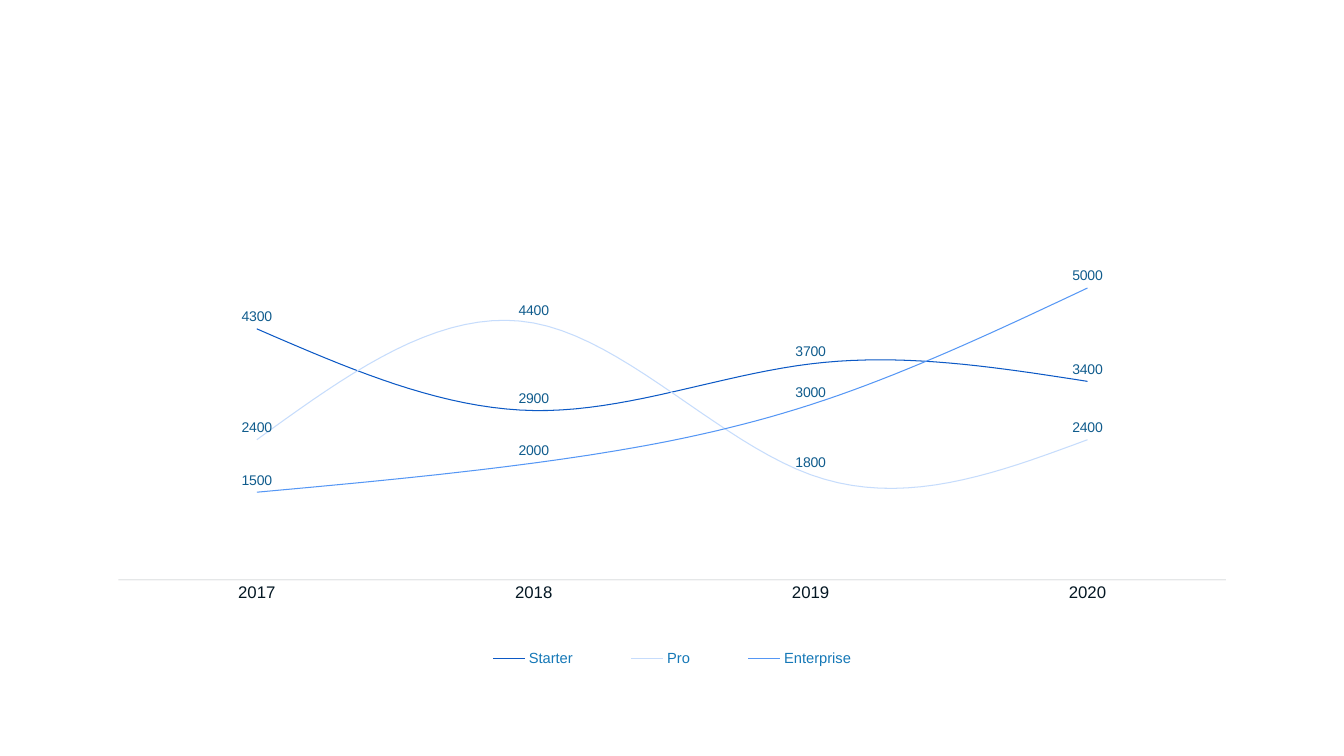
from dataclasses import dataclass

import lxml.etree
import pptx
import pptx.chart.data
import pptx.dml.color
import pptx.enum.chart
import pptx.oxml
import pptx.oxml.ns
import pptx.util
from pptx.util import Cm


@dataclass(frozen=True)
class Theme:
    font: str = "Arial"
    axis: str = "041723"
    legend: str = "1578B7"
    label: str = "105C8D"
    lines: tuple = ("0C59C5", "C6DCFC", "5597F5")
    axis_size: float = 12
    legend_size: float = 10.5
    label_size: float = 10
    line_width: float = 0.75
    axis_opacity: int = 10


THEME = Theme()
YEARS = ("2017", "2018", "2019", "2020")
PLANS = {
    "Starter": (4300, 2900, 3700, 3400),
    "Pro": (2400, 4400, 1800, 2400),
    "Enterprise": (1500, 2000, 3000, 5000),
}


def colour(value):
    return pptx.dml.color.RGBColor.from_string(value)


def set_font(font, size, value):
    font.name = THEME.font
    font.size = pptx.util.Pt(size)
    font.color.rgb = colour(value)


def set_line(line, value):
    line.color.rgb = colour(value)
    line.width = pptx.util.Pt(THEME.line_width)


def make_layout(x, y, width, height, inner=False):
    namespace = pptx.oxml.ns.nsdecls("c")
    layout = pptx.oxml.parse_xml(f"<c:layout {namespace}><c:manualLayout/></c:layout>")
    settings = [("layoutTarget", "inner")] if inner else []
    settings += [("xMode", "edge"), ("yMode", "edge")]
    settings += [("x", x), ("y", y), ("w", width), ("h", height)]
    for tag, value in settings:
        item = lxml.etree.SubElement(layout[0], pptx.oxml.ns.qn(f"c:{tag}"))
        item.set("val", str(value))
    return layout


def find_part(chart, *tags):
    steps = "/".join(pptx.oxml.ns.qn(tag) for tag in tags)
    return chart.element.find(".//" + steps)


def replace_layout(parent, index, layout):
    for old in parent.findall(pptx.oxml.ns.qn("c:layout")):
        parent.remove(old)
    parent.insert(index, layout)


def style_axes(chart):
    years = chart.category_axis
    years.major_tick_mark = pptx.enum.chart.XL_TICK_MARK.NONE
    years.has_major_gridlines = False
    set_font(years.tick_labels.font, THEME.axis_size, THEME.axis)
    set_line(years.format.line, THEME.axis)
    shade = find_part(
        chart, "c:catAx", "c:spPr", "a:ln", "a:solidFill", "a:srgbClr"
    )
    alpha = lxml.etree.SubElement(shade, pptx.oxml.ns.qn("a:alpha"))
    alpha.set("val", str(THEME.axis_opacity * 1000))
    amounts = chart.value_axis
    amounts.minimum_scale = 0
    amounts.maximum_scale = 6000
    amounts.has_major_gridlines = False
    amounts.visible = False


def style_legend(chart):
    chart.has_legend = True
    legend = chart.legend
    legend.position = pptx.enum.chart.XL_LEGEND_POSITION.BOTTOM
    legend.include_in_layout = False
    set_font(legend.font, THEME.legend_size, THEME.legend)
    layout = make_layout(0.29, 0.92, 0.42, 0.09)
    replace_layout(find_part(chart, "c:legend"), 1, layout)


def style_series(series, value):
    series.smooth = True
    series.marker.style = pptx.enum.chart.XL_MARKER_STYLE.NONE
    set_line(series.format.line, value)
    labels = series.data_labels
    labels.show_value = True
    labels.position = pptx.enum.chart.XL_LABEL_POSITION.ABOVE
    set_font(labels.font, THEME.label_size, THEME.label)


def add_line_chart(page, left, top, width, height):
    data = pptx.chart.data.CategoryChartData()
    data.categories = YEARS
    for name, values in PLANS.items():
        data.add_series(name, values)
    kind = pptx.enum.chart.XL_CHART_TYPE.LINE
    chart = page.shapes.add_chart(kind, left, top, width, height, data).chart
    chart.has_title = False
    chart.font.name = THEME.font
    chart.font.size = pptx.util.Pt(THEME.label_size)
    chart.plots[0].vary_by_categories = False
    layout = make_layout(0, 0.03, 1, 0.76, inner=True)
    replace_layout(find_part(chart, "c:plotArea"), 0, layout)
    style_axes(chart)
    style_legend(chart)
    for series, value in zip(chart.plots[0].series, THEME.lines):
        style_series(series, value)


def main():
    deck = pptx.Presentation()
    deck.slide_width = Cm(33.87)
    deck.slide_height = Cm(19.05)
    page = deck.slides.add_slide(deck.slide_layouts.get_by_name("Blank"))
    add_line_chart(page, Cm(2.97), Cm(5.44), Cm(27.94), Cm(11.61))
    deck.save("out.pptx")


if __name__ == "__main__":
    main()
